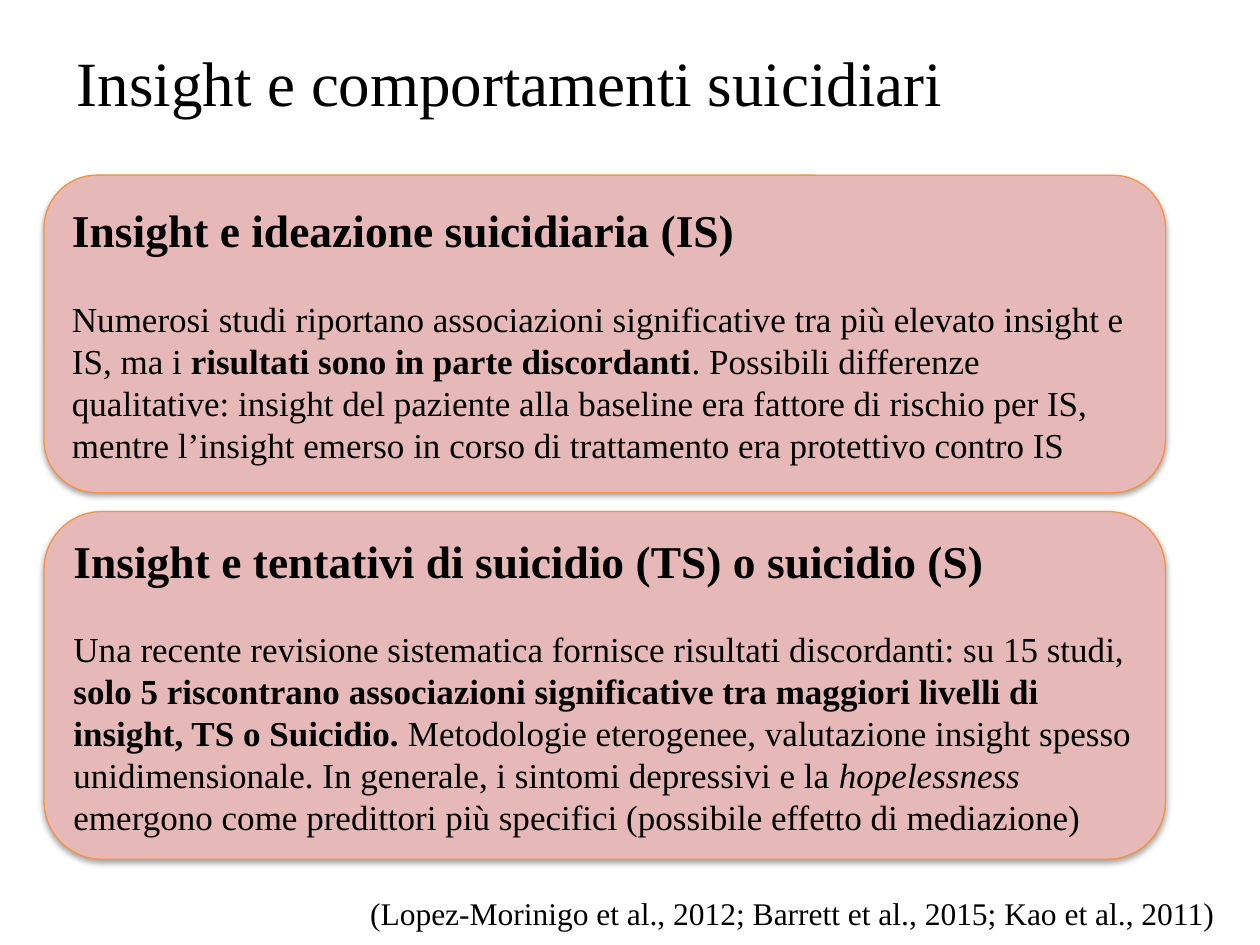
from lxml import etree
from pptx import Presentation
from pptx.dml.color import RGBColor as Rgb
from pptx.enum.shapes import MSO_SHAPE as Shape
from pptx.enum.text import MSO_ANCHOR as Anchor, MSO_AUTO_SIZE as Fit, PP_ALIGN as Align
from pptx.oxml.ns import qn
from pptx.util import Inches, Pt

COLORS = {"text": "000000", "card": "E6B9B8", "edge": "F69240", "shade": "000000"}

CARDS = [
    (1.39, 2.52, "Insight e ideazione suicidiaria (IS)", [
        ("Numerosi studi riportano associazioni significative tra più elevato insight e IS, ma i ", ""),
        ("risultati sono in parte discordanti", "b"),
        (". Possibili differenze qualitative: insight del paziente alla baseline era fattore di "
         "rischio per IS, mentre l’insight emerso in corso di trattamento era protettivo contro IS", ""),
    ]),
    (4.06, 2.76, "Insight e tentativi di suicidio (TS) o suicidio (S)", [
        ("Una recente revisione sistematica fornisce risultati discordanti: su 15 studi, ", ""),
        ("solo 5 riscontrano associazioni significative tra maggiori livelli di insight, "
         "TS o Suicidio.", "b"),
        (" Metodologie eterogenee, valutazione insight spesso unidimensionale. In generale, "
         "i sintomi depressivi e la ", ""),
        ("hopelessness", "i"),
        (" emergono come predittori più specifici (possibile effetto di mediazione)", ""),
    ]),
]


class Deck:
    face = "Times New Roman"

    def __init__(self):
        self.prs = Presentation()
        self.prs.slide_width, self.prs.slide_height = Inches(10), Inches(7.5)
        self.slide = self.prs.slides.add_slide(self.prs.slide_layouts[5])

    def color(self, key):
        return Rgb.from_string(COLORS[key])

    def style(self, para, size, align=Align.LEFT):
        para.alignment = align
        para.font.name = self.face
        para.font.size = Pt(size)
        para.font.color.rgb = self.color("text")

    def title(self, text, box):
        shape = self.slide.shapes.title
        shape.left, shape.top, shape.width, shape.height = map(Inches, box)
        frame = shape.text_frame
        frame.text = text
        frame.auto_size = Fit.NONE
        frame.vertical_anchor = Anchor.MIDDLE
        self.style(frame.paragraphs[0], 36)

    def shadow(self, shape):
        shape.shadow.inherit = False
        effects = shape._element.spPr.find(qn("a:effectLst"))
        outer = etree.SubElement(effects, qn("a:outerShdw"), blurRad=str(Pt(3.1)),
                                 dist=str(Pt(1.8)), dir="5400000", rotWithShape="0")
        tint = etree.SubElement(outer, qn("a:srgbClr"), val=COLORS["shade"])
        etree.SubElement(tint, qn("a:alpha"), val="35000")

    def card(self, top, height, head, parts):
        box = map(Inches, (0.35, top, 8.9, height))
        shape = self.slide.shapes.add_shape(Shape.ROUNDED_RECTANGLE, *box)
        shape.fill.solid()
        shape.fill.fore_color.rgb = self.color("card")
        shape.line.color.rgb = self.color("edge")
        shape.line.width = Pt(0.75)
        self.shadow(shape)
        frame = shape.text_frame
        frame.word_wrap = True
        frame.vertical_anchor = Anchor.MIDDLE
        first = frame.paragraphs[0]
        first.text = head
        self.style(first, 26)
        first.font.bold = True
        body = frame.add_paragraph()
        self.style(body, 20)
        body.space_before = Pt(23)
        for text, mark in parts:
            run = body.add_run()
            run.text = text
            if mark == "b":
                run.font.bold = True
            elif mark == "i":
                run.font.italic = True

    def cite(self, text, box):
        frame = self.slide.shapes.add_textbox(*map(Inches, box)).text_frame
        frame.word_wrap = False
        frame.text = text
        self.style(frame.paragraphs[0], 18, Align.RIGHT)


def main():
    deck = Deck()
    deck.title("Insight e comportamenti suicidiari", (0.51, 0.29, 9.29, 0.71))
    for card in CARDS:
        deck.card(*card)
    deck.cite("(Lopez-Morinigo et al., 2012; Barrett et al., 2015; Kao et al., 2011)",
              (2.77, 7.05, 6.97, 0.4))
    deck.prs.save("out.pptx")


if __name__ == "__main__":
    main()
